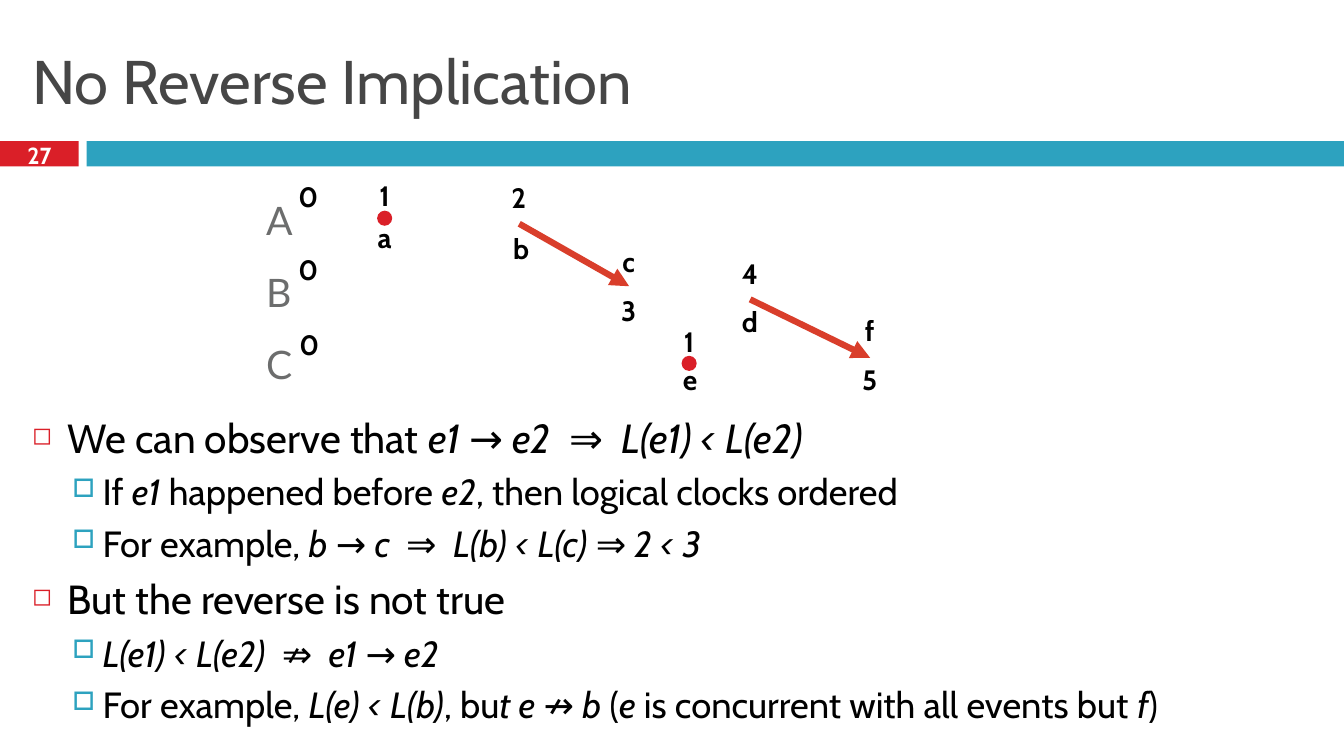
"""Builds a slide on logical clocks: event order gives clock order, but not the reverse."""
import pptx
import pptx.dml.color
import pptx.enum.shapes
import pptx.enum.text
import pptx.util
from lxml import etree

Inches, Pt = pptx.util.Inches, pptx.util.Pt
SHAPE = pptx.enum.shapes.MSO_SHAPE
ALIGN = pptx.enum.text.PP_ALIGN
ANCHOR = pptx.enum.text.MSO_ANCHOR
RED, TEAL, ARROW, BLACK = "DA1F28", "2DA2BF", "D93E2B", "000000"

TITLE = "No Reverse Implication"
PAGE = "27"
BANDS = [(0, 0.78, RED), (0.86, 12.47, TEAL)]
# Asterisks switch italics on and off.
CLAIMS = [
    (0, "We can observe that *e1 → e2  ⇒  L(e1) < L(e2)*"),
    (1, "If *e1* happened before *e2*, then logical clocks ordered"),
    (1, "For example, *b → c  ⇒  L(b) < L(c) ⇒ 2 < 3*"),
    (0, "But the reverse is not true"),
    (1, "*L(e1) < L(e2)  ⇏  e1 → e2*"),
    (1, "For example, *L(e) < L(b)*, bu*t e ↛ b *(*e* is concurrent with all events but *f*)"),
]
# Size, indent, hanging, space before, bullet, bullet colour, bullet percent
LEVELS = [
    (29, 0.35, 0.35, 7, "◻", RED, 60),
    (26, 0.7, 0.3, 5.5, "□", TEAL, 70),
]
PROCESSES = [("A", 1.89), ("B", 2.61), ("C", 3.32)]
# Label, centre x, top
CLOCKS = [
    ("0", 3.03, 1.73), ("0", 3.03, 2.46), ("0", 3.04, 3.2),
    ("1", 3.81, 1.72), ("2", 5.14, 1.74), ("3", 6.23, 2.86),
    ("4", 7.43, 2.5), ("1", 6.83, 3.17), ("5", 8.62, 3.55),
]
EVENTS = [
    ("a", 3.81, 2.14), ("b", 5.16, 2.25), ("c", 6.23, 2.38),
    ("d", 7.43, 2.97), ("e", 6.84, 3.55), ("f", 8.62, 3.06),
]
MESSAGES = [(5.15, 2.22, 6.24, 2.84), (7.44, 2.97, 8.63, 3.55)]
LOCAL_EVENTS = [(3.74, 2.09), (6.76, 3.53)]


def rgb(colour):
    return pptx.dml.color.RGBColor.from_string(colour)


def child(parent, tag, **attributes):
    return etree.SubElement(parent, pptx.oxml.ns.qn(tag), attributes)


def solid(kind, left, top, width, height, colour):
    shape = slide.shapes.add_shape(kind, Inches(left), Inches(top), Inches(width), Inches(height))
    shape.shadow.inherit = False
    shape.fill.solid()
    shape.fill.fore_color.rgb = rgb(colour)
    shape.line.fill.background()


def text_frame(left, top, width, height, anchor=ANCHOR.TOP, wrap=True):
    box = slide.shapes.add_textbox(Inches(left), Inches(top), Inches(width), Inches(height))
    frame = box.text_frame
    frame.word_wrap = wrap
    frame.vertical_anchor = anchor
    return frame


def style(paragraph, size, colour, face="Cabin", bold=False, align=ALIGN.LEFT):
    paragraph.alignment = align
    font = paragraph.font
    font.name, font.size, font.bold = face, Pt(size), bold
    font.color.rgb = rgb(colour)


def write(frame, words, *look, **options):
    frame.text = words
    style(frame.paragraphs[0], *look, **options)


def claim(paragraph, level, words):
    size, indent, hanging, before, bullet, colour, percent = LEVELS[level]
    paragraph.level = level
    paragraph.space_before = Pt(before)
    properties = paragraph._p.get_or_add_pPr()
    properties.set("marL", str(Inches(indent)))
    properties.set("indent", str(-Inches(hanging)))
    child(child(properties, "a:buClr"), "a:srgbClr", val=colour)
    child(properties, "a:buSzPct", val=str(percent * 1000))
    child(properties, "a:buChar", char=bullet)
    style(paragraph, size, BLACK)
    for index, part in enumerate(words.split("*")):
        if part:
            run = paragraph.add_run()
            run.text = part
            run.font.italic = index % 2 == 1


def message(x1, y1, x2, y2):
    arrow = slide.shapes.add_connector(
        pptx.enum.shapes.MSO_CONNECTOR.STRAIGHT, Inches(x1), Inches(y1), Inches(x2), Inches(y2))
    arrow.line.color.rgb = rgb(ARROW)
    arrow.line.width = Pt(4.5)
    child(arrow.line._get_or_add_ln(), "a:tailEnd", type="triangle")
    child(arrow._element.spPr, "a:effectLst")


deck = pptx.Presentation()
deck.slide_width, deck.slide_height = Inches(13.33), Inches(7.5)
slide = deck.slides.add_slide(deck.slide_layouts[6])

for left, width, colour in BANDS:
    solid(SHAPE.RECTANGLE, left, 1.4, width, 0.25, colour)
write(text_frame(0.22, 0.25, 12.89, 1.08, ANCHOR.MIDDLE), TITLE, 44, "464646")
write(text_frame(0, 1.37, 0.78, 0.33, ANCHOR.MIDDLE), PAGE, 16.6, "FFFFFF",
      bold=True, align=ALIGN.CENTER)

claims = text_frame(0.22, 4.05, 12.32, 3.36)
for index, (level, words) in enumerate(CLAIMS):
    claim(claims.add_paragraph() if index else claims.paragraphs[0], level, words)

for process, top in PROCESSES:
    frame = text_frame(2.58, top, 0.38, 0.58, ANCHOR.MIDDLE, wrap=False)
    frame.margin_left = frame.margin_right = Inches(0.06)
    frame.margin_top = frame.margin_bottom = Inches(0.06)
    write(frame, process, 28, "6C6D6D", face="Lato")

for ends in MESSAGES:
    message(*ends)
for label, centre, top in CLOCKS + EVENTS:
    write(text_frame(centre - 0.17, top, 0.35, 0.44, wrap=False), label, 20, BLACK,
          bold=True, align=ALIGN.CENTER)
for left, top in LOCAL_EVENTS:
    solid(SHAPE.OVAL, left, top, 0.15, 0.15, RED)

deck.save("out.pptx")
